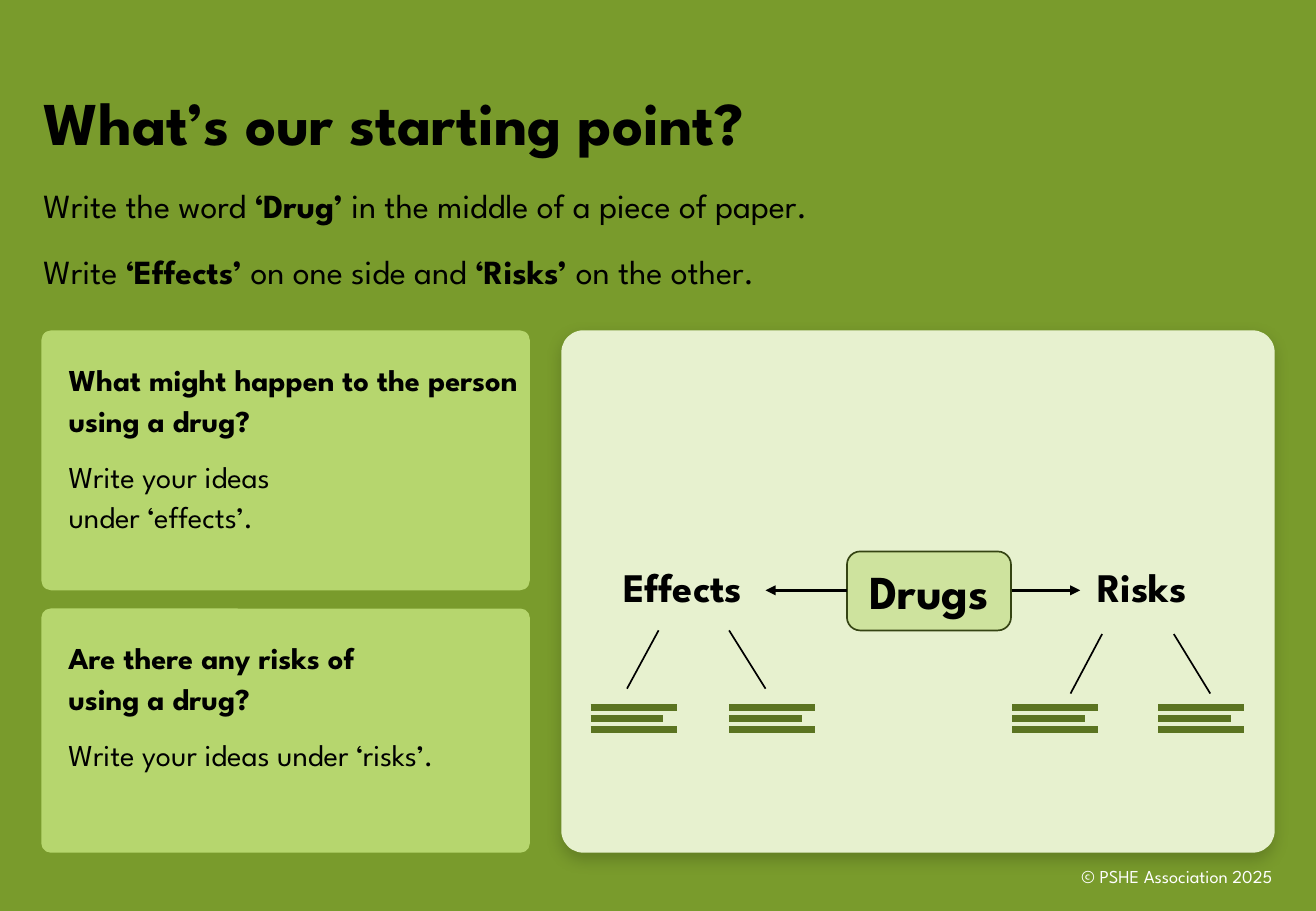
import dataclasses

import lxml.etree
import pptx
import pptx.dml.color
import pptx.enum.shapes
import pptx.enum.text
import pptx.oxml
import pptx.oxml.ns
import pptx.util

SHAPES = pptx.enum.shapes.MSO_SHAPE
ANCHORS = pptx.enum.text.MSO_ANCHOR
ALIGNMENTS = pptx.enum.text.PP_ALIGN
CELL = pptx.util.Inches(0.1)  # side of one square of the layout grid
COLUMNS, ROWS = 108.3, 75


@dataclasses.dataclass(frozen=True)
class Theme:
    font: str = "League Spartan"
    background: str = "799B2C"
    card: str = "B6D66E"
    panel: str = "E7F1CF"
    topic: str = "CEE39E"
    topic_line: str = "354413"
    idea: str = "5B7421"
    ink: str = "000000"
    footer_ink: str = "FFFFFF"
    title_size: float = 36
    topic_size: float = 28
    label_size: float = 24
    body_size: float = 20
    card_size: float = 18
    footer_size: float = 10.8


@dataclasses.dataclass(frozen=True)
class Box:
    """A rectangle in grid columns and rows."""
    left: float
    top: float
    width: float
    height: float

    def area(self, left, top, width, height):
        return Box(self.left + left, self.top + top, width, height)

    def lengths(self):
        return [round(value * CELL) for value in dataclasses.astuple(self)]


THEME = Theme()


def rgb(value):
    return pptx.dml.color.RGBColor.from_string(value)


def apply_format(target, values):
    for name, value in values.items():
        setattr(target, name, value)


def write(shape, paragraphs, size, color=THEME.ink, frame_format=None,
          paragraph_format=None, gap=0):
    """Each paragraph is a list of (text, bold); a newline is a line break."""
    frame = shape.text_frame
    apply_format(frame, {"word_wrap": True, "vertical_anchor": ANCHORS.TOP,
                         **(frame_format or {})})
    for index, runs in enumerate(paragraphs):
        paragraph = frame.add_paragraph() if index else frame.paragraphs[0]
        apply_format(paragraph, {"alignment": ALIGNMENTS.LEFT,
                                 **(paragraph_format or {})})
        if index:
            paragraph.space_before = pptx.util.Pt(gap)
        for text, bold in runs:
            for line_number, line in enumerate(text.split("\n")):
                if line_number:
                    paragraph.add_line_break()
                run = paragraph.add_run()
                run.text = line
                apply_format(run.font, {"name": THEME.font, "bold": bold,
                                        "size": pptx.util.Pt(size)})
                run.font.color.rgb = rgb(color)


def add_text(slide, box, paragraphs, size, **options):
    write(slide.shapes.add_textbox(*box.lengths()), paragraphs, size, **options)


def add_rounded(slide, box, fill, radius, line=None):
    shape = slide.shapes.add_shape(SHAPES.ROUNDED_RECTANGLE, *box.lengths())
    shape.shadow.inherit = False
    shape.adjustments[0] = radius
    shape.fill.solid()
    shape.fill.fore_color.rgb = rgb(fill)
    if line:
        shape.line.color.rgb = rgb(line)
        shape.line.width = pptx.util.Pt(1)
    else:
        shape.line.fill.background()
    return shape


def add_line(slide, box, start, end, color=THEME.ink, width=1, arrow=False):
    """Draw from start to end, both (column, row) inside the box."""
    points = [round(value * CELL) for column, row in (start, end)
              for value in (box.left + column, box.top + row)]
    connector = slide.shapes.add_connector(
        pptx.enum.shapes.MSO_CONNECTOR.STRAIGHT, *points)
    connector.line.color.rgb = rgb(color)
    connector.line.width = pptx.util.Pt(width)
    properties = connector._element.spPr
    if arrow:
        lxml.etree.SubElement(properties.find(pptx.oxml.ns.qn("a:ln")),
                              pptx.oxml.ns.qn("a:tailEnd"), type="triangle")
    lxml.etree.SubElement(properties, pptx.oxml.ns.qn("a:effectLst"))


def add_soft_shadow(shape):
    effects = shape._element.spPr.find(pptx.oxml.ns.qn("a:effectLst"))
    effects.append(pptx.oxml.parse_xml(
        f'<a:outerShdw {pptx.oxml.ns.nsdecls("a")} blurRad="{pptx.util.Pt(9.5)}" '
        f'dist="{pptx.util.Pt(4)}" dir="5400000" algn="t" rotWithShape="0">'
        f'<a:srgbClr val="{THEME.ink}"><a:alpha val="18000"/></a:srgbClr>'
        '</a:outerShdw>'))


def add_heading(slide, box):
    add_text(slide, box.area(0, 0, 72.8, 7.6), [[("What’s our starting point?", True)]],
             THEME.title_size, frame_format={"vertical_anchor": ANCHORS.BOTTOM},
             paragraph_format={"line_spacing": pptx.util.Pt(43)})
    instructions = [
        [("Write the word ", False), ("‘Drug’ ", True),
         ("in the middle of a piece of paper.", False)],
        [("Write ", False), ("‘Effects’ ", True), ("on one side and ", False),
         ("‘Risks’ ", True), ("on the other.", False)],
    ]
    add_text(slide, box.area(0, 8.3, box.width, 10), instructions, THEME.body_size,
             paragraph_format={"line_spacing": pptx.util.Pt(28)}, gap=11)


def add_card(slide, box, question, task):
    inset = 2 * CELL
    write(add_rounded(slide, box, THEME.card, 0.038),
          [[(question, True)], [(task, False)]], THEME.card_size, gap=9,
          frame_format={"margin_left": inset, "margin_top": inset,
                        "margin_right": 0, "margin_bottom": 0},
          paragraph_format={"line_spacing": pptx.util.Pt(24)})


def add_stems(slide, box):
    """Two lines that spread from a label to the box's bottom corners."""
    add_line(slide, box, (2.6, 0), (0, box.height))
    add_line(slide, box, (box.width - 3, 0), (box.width, box.height))


def add_ideas(slide, box):
    """Two blocks of three bars, one at each side of the box."""
    for column in (0, box.width - 7.1):
        for share, length in ((0, 7.1), (0.5, 6), (1, 7.1)):
            row = share * box.height
            add_line(slide, box, (column, row), (column + length, row),
                     THEME.idea, 3.75)


def add_diagram(slide, box):
    add_soft_shadow(add_rounded(slide, box, THEME.panel, 0.042))
    topic = add_rounded(slide, box.area(23.5, 18.2, 13.5, 6.5), THEME.topic,
                        0.167, THEME.topic_line)
    write(topic, [[("Drugs", True)]], THEME.topic_size,
          frame_format={"vertical_anchor": ANCHORS.MIDDLE},
          paragraph_format={"alignment": ALIGNMENTS.CENTER})
    for start, end in ((23.5, 16.8), (37.1, 42.7)):
        add_line(slide, box, (start, 21.4), (end, 21.4), width=1.5, arrow=True)
    branches = [
        ("Effects", 4.1, (5.4, 24.7, 11.4, 4.8), (2.4, 18.5)),
        ("Risks", 43.1, (41.9, 25, 11.5, 4.9), (37.1, 19.1)),
    ]
    for label, label_column, stems, (ideas_column, ideas_width) in branches:
        add_text(slide, box.area(label_column, 18.7, 13.5, 5.5), [[(label, True)]],
                 THEME.label_size,
                 paragraph_format={"line_spacing": pptx.util.Pt(28)})
        add_stems(slide, box.area(*stems))
        add_ideas(slide, box.area(ideas_column, 31.05, ideas_width, 1.8))


def add_footer(slide, box):
    add_text(slide, box, [[("© PSHE Association 2025", False)]], THEME.footer_size,
             color=THEME.footer_ink,
             frame_format={"vertical_anchor": ANCHORS.MIDDLE},
             paragraph_format={"alignment": ALIGNMENTS.RIGHT})


def main():
    presentation = pptx.Presentation()
    apply_format(presentation, {"slide_width": round(COLUMNS * CELL),
                                "slide_height": ROWS * CELL})
    slide = presentation.slides.add_slide(presentation.slide_layouts[6])
    slide.background.fill.solid()
    slide.background.fill.fore_color.rgb = rgb(THEME.background)
    page = Box(0, 0, COLUMNS, ROWS)
    add_footer(slide, page.area(81.3, 70.1, 24.4, 4))
    add_heading(slide, page.area(2.6, 5.9, 92, 18.3))
    add_card(slide, page.area(3.4, 27.2, 40.2, 21.4),
             "What might happen to the person using a drug?",
             "Write your ideas\nunder ‘effects’.")
    add_card(slide, page.area(3.4, 50.1, 40.2, 20.1),
             "Are there any risks of\nusing a drug?",
             "Write your ideas under ‘risks’.")
    add_diagram(slide, page.area(46.2, 27.2, 58.7, 43))
    presentation.save("out.pptx")


if __name__ == "__main__":
    main()
